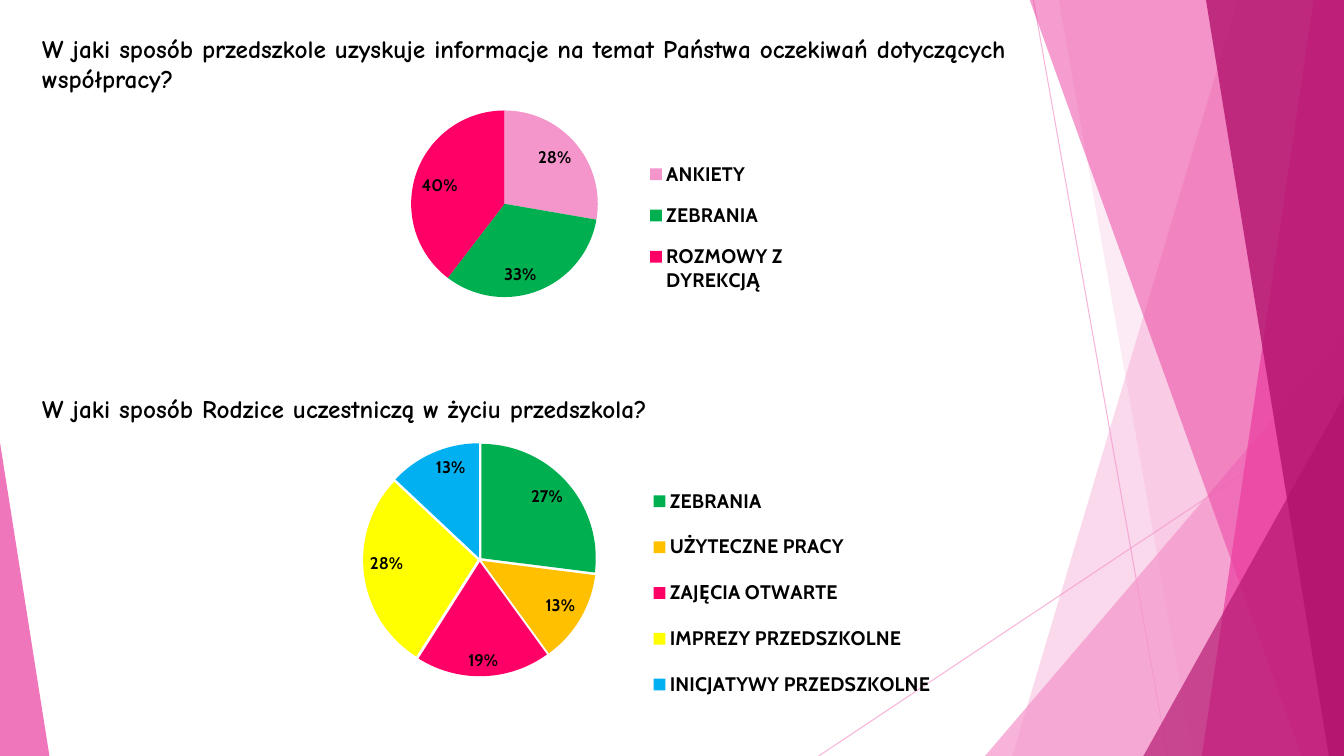
from lxml import etree
from pptx import Presentation
from pptx.chart.data import CategoryChartData
from pptx.dml.color import RGBColor
from pptx.enum.chart import XL_CHART_TYPE, XL_LABEL_POSITION, XL_LEGEND_POSITION
from pptx.enum.shapes import MSO_CONNECTOR, MSO_SHAPE
from pptx.enum.text import MSO_ANCHOR, PP_ALIGN
from pptx.oxml.ns import qn
from pptx.util import Inches, Pt

PIE = XL_CHART_TYPE.PIE
IN_END = XL_LABEL_POSITION.INSIDE_END
BOTTOM = XL_LEGEND_POSITION.BOTTOM
STRAIGHT = MSO_CONNECTOR.STRAIGHT
TRIANGLE = MSO_SHAPE.ISOSCELES_TRIANGLE
TOP = MSO_ANCHOR.TOP
LEFT = PP_ALIGN.LEFT

WIDE, HIGH = 13.33, 7.5
PLOT = (0.31, 0.002, 0.336, 0.744)
COLORS = {
    "black": "000000", "white": "FFFFFF", "pale": "F496CB", "pink": "EB3D9F",
    "plum": "B2136D", "green": "00B050", "rose": "FF0066", "gold": "FFC000",
    "yellow": "FFFF00", "blue": "00B0F0",
}
FORMATS = {
    "head": {"name": "Comic Neue", "size": Pt(18), "bold": True},
    "base": {"name": "Cabin", "size": Pt(10)},
    "key": {"name": "Cabin", "size": Pt(14), "bold": True},
    "label": {"name": "Cabin", "size": Pt(12), "bold": True},
}


class Deck:
    def __init__(self):
        self.prs = Presentation()
        self.prs.slide_width, self.prs.slide_height = Inches(WIDE), Inches(HIGH)
        self.slide = self.prs.slides.add_slide(self.prs.slide_layouts[6])
        self.shapes = self.slide.shapes
        self.paint(self.slide.background.fill, "white")

    def paint(self, fill, color, alpha=100):
        fill.solid()
        fill.fore_color.rgb = RGBColor.from_string(COLORS[color])
        if alpha < 100:
            # The fill of a shape or line sits in its own properties
            tag = fill._xPr.find(qn("a:solidFill"))[0]
            etree.SubElement(tag, qn("a:alpha")).set("val", str(alpha * 1000))

    def style(self, font, kind):
        for name, value in FORMATS[kind].items():
            setattr(font, name, value)
        font.color.rgb = RGBColor.from_string(COLORS["black"])

    def line(self, start, end):
        line = self.shapes.add_connector(STRAIGHT, *map(Inches, start + end))
        line.line.width = Pt(0.75)
        self.paint(line.line.fill, "pale", 70)
        etree.SubElement(line._element.spPr, qn("a:effectLst"))

    def finish(self, shape, color, alpha):
        shape.shadow.inherit = False
        shape.line.fill.background()
        self.paint(shape.fill, color, alpha)

    def band(self, top, foot, color, alpha):
        """A band from a slanted left edge to the right side of the slide."""
        rim = -0.01
        spots = [(WIDE, rim), (WIDE, HIGH), (foot, HIGH)]
        form = self.shapes.build_freeform(Inches(top), Inches(rim))
        form.add_line_segments([(Inches(x), Inches(y)) for x, y in spots])
        self.finish(form.convert_to_shape(), color, alpha)

    def wedge(self, left, top, width, tip, color, alpha):
        box = map(Inches, (left, top, width, HIGH - top))
        shape = self.shapes.add_shape(TRIANGLE, *box)
        shape.adjustments[0] = tip
        self.finish(shape, color, alpha)

    def text(self, box, words):
        frame = self.shapes.add_textbox(*map(Inches, box)).text_frame
        frame.word_wrap = True
        frame.vertical_anchor = TOP
        para = frame.paragraphs[0]
        para.alignment = LEFT
        run = para.add_run()
        run.text = words
        self.style(run.font, "head")

    def layout(self, area, inner=False):
        node = etree.Element(qn("c:layout"))
        manual = etree.SubElement(node, qn("c:manualLayout"))
        pairs = [("layoutTarget", "inner")] if inner else []
        pairs += [("xMode", "edge"), ("yMode", "edge")]
        pairs += zip("xywh", map(str, area))
        for tag, value in pairs:
            etree.SubElement(manual, qn("c:" + tag)).set("val", value)
        return node

    def pie(self, box, slices, key, burst=0):
        data = CategoryChartData()
        data.categories = [name for name, _, _ in slices]
        data.add_series("Series 1", [value for _, value, _ in slices])
        chart = self.shapes.add_chart(PIE, *map(Inches, box), data).chart
        chart.has_title = False
        self.style(chart.font, "base")

        # Slices and their labels
        plot = chart.plots[0]
        plot.vary_by_categories = True
        series = plot.series[0]
        for i, (_, _, color) in enumerate(slices):
            self.paint(series.points[i].format.fill, color)
        if burst:
            node = etree.Element(qn("c:explosion"))
            node.set("val", str(burst))
            series._element.find(qn("c:tx")).addnext(node)
        labels = series.data_labels
        values = {
            "show_percentage": True, "show_value": False, "position": IN_END,
            "number_format": "0%", "number_format_is_linked": False,
        }
        for name, value in values.items():
            setattr(labels, name, value)
        self.style(labels.font, "label")

        # Legend and placing
        chart.has_legend = True
        legend = chart.legend
        legend.position = BOTTOM
        legend.include_in_layout = False
        self.style(legend.font, "key")
        area = chart._chartSpace.find(".//" + qn("c:plotArea"))
        for part in (area, legend._element):
            for old in part.findall(qn("c:layout")):
                part.remove(old)
        area.insert(0, self.layout(PLOT, True))
        legend._element.find(qn("c:legendPos")).addnext(self.layout(key))


def main():
    deck = Deck()

    # Slanted decoration
    deck.line((10.25, 0), (11.58, HIGH))
    deck.line((WIDE, 4.03), (8.12, HIGH))
    deck.band(12.28, 10.04, "pale", 36)
    deck.band(10.5, 11.83, "pale", 20)
    deck.wedge(9.77, 3.33, 3.56, 1, "pale", 72)
    deck.band(10.21, 12.91, "pink", 50)
    deck.band(13.03, 11.92, "pink", 70)
    deck.band(11.96, 13.18, "plum", 80)
    deck.wedge(11.34, 3.93, 1.99, 1, "plum", 66)
    deck.wedge(0, 4.39, 0.49, 0, "pink", 70)

    # Sources of information
    deck.text((0.32, 0.28, 10.09, 0.77),
              "W jaki sposób przedszkole uzyskuje informacje na temat "
              "Państwa oczekiwań dotyczących współpracy?")
    deck.pie((2.37, 1.05, 5.51, 2.6), [
        ("ANKIETY", 28, "pale"),
        ("ZEBRANIA", 33, "green"),
        ("ROZMOWY Z DYREKCJĄ", 40, "rose"),
    ], (0.72, 0.15, 0.28, 0.63))

    # Ways of taking part
    deck.text((0.32, 3.85, 9.56, 0.4),
              "W jaki sposób Rodzice uczestniczą w życiu przedszkola?")
    deck.pie((0.49, 4.39, 8.93, 3.11), [
        ("ZEBRANIA", 27, "green"),
        ("UŻYTECZNE PRACY", 13, "gold"),
        ("ZAJĘCIA OTWARTE", 19, "rose"),
        ("IMPREZY PRZEDSZKOLNE", 28, "yellow"),
        ("INICJATYWY PRZEDSZKOLNE", 13, "blue"),
    ], (0.65, 0.08, 0.35, 0.8), 2)

    deck.prs.save("out.pptx")


if __name__ == "__main__":
    main()
